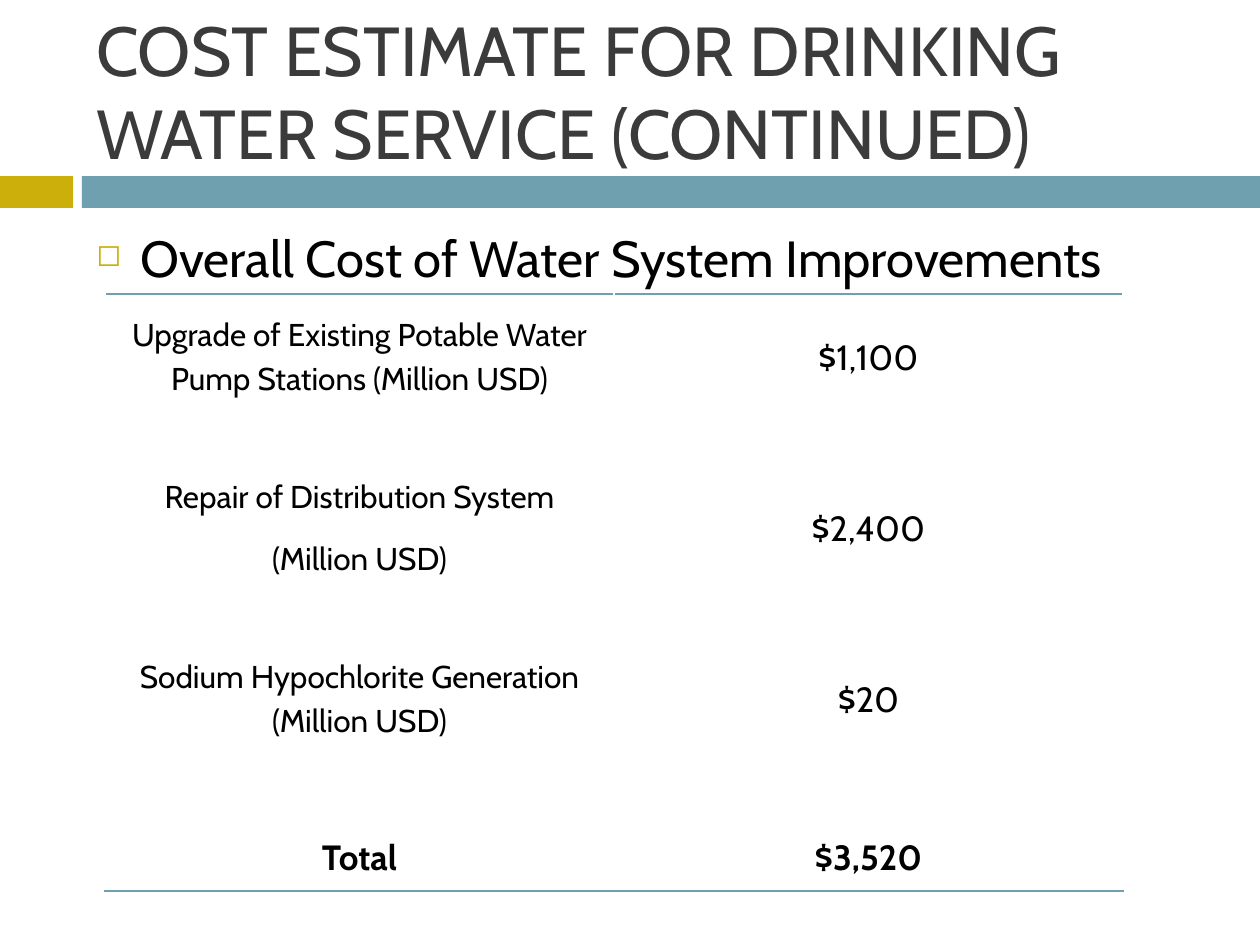
from dataclasses import dataclass

from lxml import etree
from pptx import Presentation
from pptx.dml.color import RGBColor
from pptx.enum.shapes import MSO_SHAPE
from pptx.enum.text import MSO_ANCHOR, PP_ALIGN
from pptx.oxml.ns import qn
from pptx.util import Emu, Pt

RECT = MSO_SHAPE.RECTANGLE
MIDDLE = MSO_ANCHOR.MIDDLE
CENTER = PP_ALIGN.CENTER
EMU_PER_PX = 914400 / 126


@dataclass(frozen=True)
class Theme:
    font: str = "Cabin"
    gold: str = "CCAF0A"
    teal: str = "6EA0B0"
    heading: str = "3B3B3B"
    ink: str = "000000"
    title_size: float = 39.6
    bullet_size: int = 29
    label_size: int = 18
    value_size: int = 20
    rule_width: int = 1


def px(n):
    return Emu(round(n * EMU_PER_PX))


def set_all(obj, values):
    for name, value in values.items():
        setattr(obj, name, value)


class SlideBuilder:
    def __init__(self, prs, theme):
        self.theme = theme
        self.s = prs.slides.add_slide(prs.slide_layouts[6])

    def bar(self, x, y, w, h, color):
        sp = self.s.shapes.add_shape(RECT, px(x), px(y), px(w), px(h))
        sp.shadow.inherit = False
        sp.fill.solid()
        sp.fill.fore_color.rgb = RGBColor.from_string(color)
        sp.line.fill.background()

    def run(self, p, text, size, color, bold=False):
        r = p.add_run()
        r.text = text
        set_all(r.font, {"name": self.theme.font, "size": Pt(size), "bold": bold})
        r.font.color.rgb = RGBColor.from_string(color)

    def text(self, x, y, w, h, text, size, color, **frame):
        tf = self.s.shapes.add_textbox(px(x), px(y), px(w), px(h)).text_frame
        set_all(tf, {"word_wrap": True, **frame})
        p = tf.paragraphs[0]
        self.run(p, text, size, color)
        return p

    def bullet(self, p, char, color, percent, indent):
        pPr = p._p.get_or_add_pPr()
        pPr.set("marL", str(px(indent)))
        pPr.set("indent", str(-px(indent)))
        clr = etree.SubElement(pPr, qn("a:buClr"))
        etree.SubElement(clr, qn("a:srgbClr"), val=color)
        etree.SubElement(pPr, qn("a:buSzPct"), val=str(percent * 1000))
        etree.SubElement(pPr, qn("a:buChar"), char=char)

    def rule(self, cell, side):
        """Draw one cell border; side is T or B."""
        ln = etree.Element(qn(f"a:ln{side}"), w=str(Pt(self.theme.rule_width)))
        fill = etree.SubElement(ln, qn("a:solidFill"))
        etree.SubElement(fill, qn("a:srgbClr"), val=self.theme.teal)
        cell._tc.get_or_add_tcPr().insert(0, ln)

    def cell(self, cell, lines, size, bold):
        set_all(cell, {"margin_left": px(9), "margin_right": px(9), "margin_top": 0,
                       "margin_bottom": 0, "vertical_anchor": MIDDLE})
        cell.fill.background()
        tf = cell.text_frame
        for i, line in enumerate(lines):
            p = tf.add_paragraph() if i else tf.paragraphs[0]
            set_all(p, {"alignment": CENTER, "line_spacing": 1.15, "space_after": Pt(10)})
            self.run(p, line, size, self.theme.ink, bold)

    def cost_table(self, x, y, w, heights, items):
        """Put items on every second row, with empty spacer rows between them."""
        t = self.theme
        table = self.s.shapes.add_table(
            len(heights), 2, px(x), px(y), px(w), px(sum(heights))).table
        set_all(table, {"first_row": False, "horz_banding": False})
        for row, height in zip(table.rows, heights):
            row.height = px(height)
        last = len(heights) - 1
        for i in range(len(heights)):
            label, value = items[i // 2] if i % 2 == 0 else ((), ())
            total = i == last
            label_size = t.value_size if total else t.label_size
            self.cell(table.cell(i, 0), label, label_size, total)
            self.cell(table.cell(i, 1), value, t.value_size, total)
        for col in range(2):
            self.rule(table.cell(0, col), "T")
            self.rule(table.cell(last, col), "B")


def main():
    prs = Presentation()
    set_all(prs, {"slide_width": px(1260), "slide_height": px(945)})
    t = Theme()
    b = SlideBuilder(prs, t)

    b.bar(0, 176, 73, 32, t.gold)
    b.bar(82, 176, 1178, 32, t.teal)
    b.text(84, 22, 1124, 136, "COST ESTIMATE FOR DRINKING WATER SERVICE (CONTINUED)",
           t.title_size, t.heading, vertical_anchor=MIDDLE)
    p = b.text(84, 221, 1124, 620, "Overall Cost of Water System Improvements",
               t.bullet_size, t.ink)
    p.space_before = Pt(7)
    b.bullet(p, "◻", t.gold, 60, 44)

    items = [
        (["Upgrade of Existing Potable Water Pump Stations (Million USD)"], ["$1,100"]),
        (["Repair of Distribution System", "(Million USD)"], ["$2,400"]),
        (["Sodium Hypochlorite Generation (Million USD)"], ["$20"]),
        (["Total"], ["$3,520"]),
    ]
    b.cost_table(105, 294, 1018, [121, 50, 121, 50, 121, 61, 73], items)
    prs.save("out.pptx")


if __name__ == "__main__":
    main()
